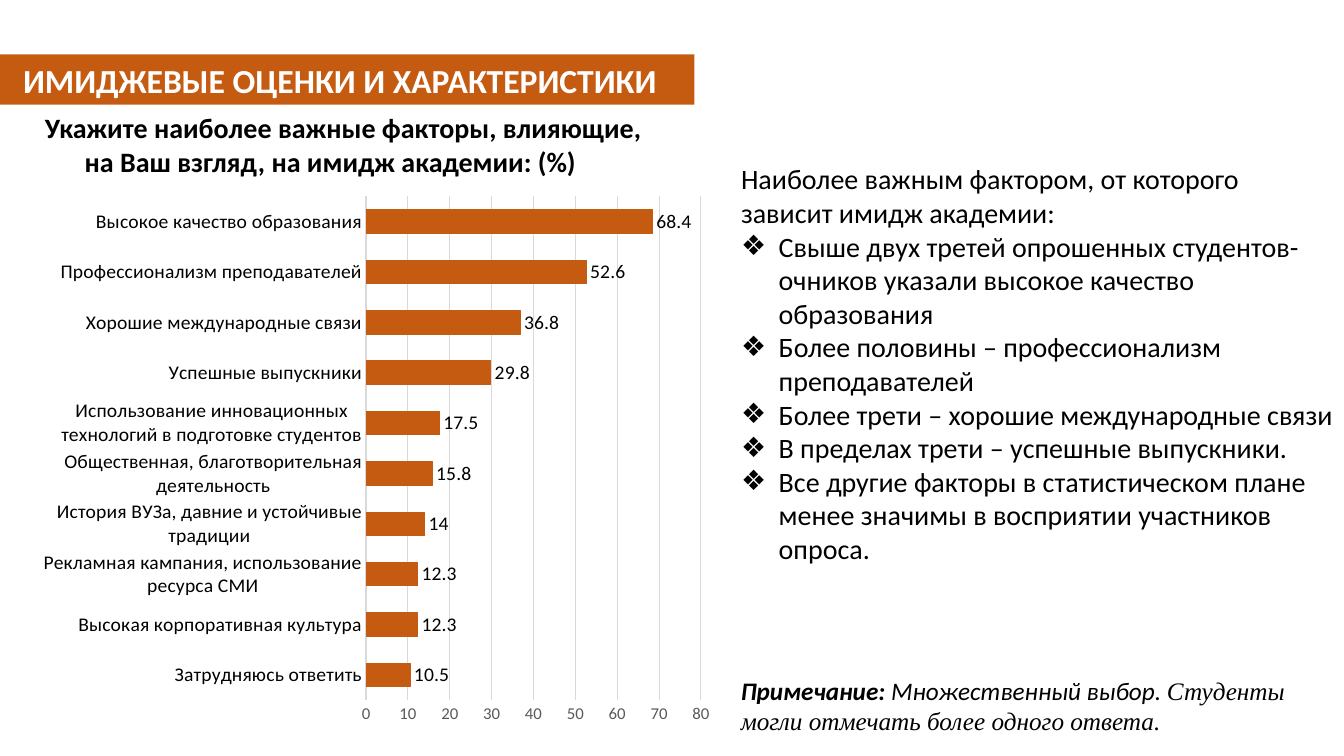
import lxml.etree
import pptx
import pptx.chart.data
import pptx.dml.color
import pptx.enum.chart
import pptx.enum.text
import pptx.oxml.ns
import pptx.util

Cm = pptx.util.Cm
Pt = pptx.util.Pt
qn = pptx.oxml.ns.qn
ALIGN = pptx.enum.text.PP_ALIGN
ANCHOR = pptx.enum.text.MSO_ANCHOR
TICK = pptx.enum.chart.XL_TICK_MARK

RUST = pptx.dml.color.RGBColor(0xC5, 0x5A, 0x11)
WHITE = pptx.dml.color.RGBColor(0xFF, 0xFF, 0xFF)
BLACK = pptx.dml.color.RGBColor(0, 0, 0)
DARK = pptx.dml.color.RGBColor(0x59, 0x59, 0x59)
LIGHT = pptx.dml.color.RGBColor(0xD9, 0xD9, 0xD9)

FACTORS = [
    ("Затрудняюсь ответить", 10.5),
    ("Высокая корпоративная культура", 12.3),
    ("Рекламная кампания, использование ресурса СМИ", 12.3),
    ("История ВУЗа, давние и устойчивые традиции", 14),
    ("Общественная, благотворительная деятельность", 15.8),
    ("Использование инновационных технологий в подготовке студентов", 17.5),
    ("Успешные выпускники", 29.8),
    ("Хорошие международные связи", 36.8),
    ("Профессионализм преподавателей", 52.6),
    ("Высокое качество образования", 68.4),
]
LEAD = "Наиболее важным фактором, от которого зависит имидж академии:"
POINTS = [
    "Свыше двух третей опрошенных студентов- очников указали высокое качество образования",
    "Более половины – профессионализм преподавателей",
    "Более трети – хорошие международные связи",
    "В пределах трети – успешные выпускники.",
    "Все другие факторы в статистическом плане менее значимы в восприятии участников опроса.",
]
NOTE = [
    ("Примечание: ", {"bold": True}),
    ("Множественный выбор. ", {}),
    ("Студенты могли отмечать более одного ответа.", {"name": "Times New Roman"}),
]
FRAME = {"word_wrap": True, "auto_size": pptx.enum.text.MSO_AUTO_SIZE.NONE,
         "vertical_anchor": ANCHOR.TOP}


def put(thing, form):
    for key, value in form.items():
        setattr(thing, key, value)


def style(font, size, color=BLACK, **more):
    put(font, {"name": "Calibri", "size": Pt(size), **more})
    font.color.rgb = color


def place(shape, box):
    put(shape, dict(zip(("left", "top", "width", "height"), box)))


def add_run(para, text, size, color=BLACK, **more):
    run = para.add_run()
    run.text = text
    style(run.font, size, color, **more)


def add_head(slide, box):
    title = slide.shapes.title
    place(title, box)
    title.fill.solid()
    title.fill.fore_color.rgb = RUST
    put(title.text_frame, {**FRAME, "vertical_anchor": ANCHOR.MIDDLE,
                           "margin_left": Cm(0.58)})
    para = title.text_frame.paragraphs[0]
    para.alignment = ALIGN.LEFT
    add_run(para, "ИМИДЖЕВЫЕ ОЦЕНКИ И ХАРАКТЕРИСТИКИ", 24, WHITE, bold=True)


def add_quest(slide, box):
    """Place the survey question above the chart."""
    frame = slide.shapes.add_textbox(*box).text_frame
    put(frame, FRAME)
    para = frame.paragraphs[0]
    para.alignment = ALIGN.CENTER
    para._p.get_or_add_pPr().set("indent", str(Cm(0.64)))
    add_run(para, "Укажите наиболее важные факторы, влияющие, "
            "на Ваш взгляд, на имидж академии: (%)", 20, bold=True)


def set_plot(chart, **parts):
    """Fix the inner plot area as fractions of the chart."""
    area = chart._chartSpace.chart.plotArea
    for old in area.findall(qn("c:layout")):
        area.remove(old)
    layout = lxml.etree.Element(qn("c:layout"))
    area.insert(0, layout)
    manual = lxml.etree.SubElement(layout, qn("c:manualLayout"))
    rules = {"layoutTarget": "inner", "xMode": "edge", "yMode": "edge", **parts}
    for key, value in rules.items():
        lxml.etree.SubElement(manual, qn("c:" + key)).set("val", str(value))


def add_bars(slide, box):
    data = pptx.chart.data.CategoryChartData()
    data.categories = [name for name, _ in FACTORS]
    data.add_series("Series 1", [share for _, share in FACTORS])
    kind = pptx.enum.chart.XL_CHART_TYPE.BAR_CLUSTERED
    chart = slide.shapes.add_chart(kind, *box, data).chart
    put(chart, {"has_title": False, "has_legend": False})
    style(chart.font, 10)
    set_plot(chart, x=0.49, y=0, w=0.49, h=0.97)

    plot = chart.plots[0]
    put(plot, {"gap_width": 115, "overlap": -20, "vary_by_categories": False,
               "has_data_labels": True})
    put(plot.data_labels, {
        "show_value": True,
        "position": pptx.enum.chart.XL_LABEL_POSITION.OUTSIDE_END})
    style(plot.data_labels.font, 14)
    bars = plot.series[0].format
    bars.fill.solid()
    bars.fill.fore_color.rgb = RUST
    bars.line.color.rgb = RUST
    bars.line.width = Pt(0.75)

    ticks = {"major_tick_mark": TICK.NONE, "minor_tick_mark": TICK.NONE}
    names, scale = chart.category_axis, chart.value_axis
    put(names, {**ticks, "has_major_gridlines": False})
    put(scale, {**ticks, "has_major_gridlines": True, "minimum_scale": 0,
                "maximum_scale": 80, "major_unit": 10})
    style(names.tick_labels.font, 14)
    style(scale.tick_labels.font, 12, DARK)
    scale.format.line.fill.background()
    for line, width in ((names.format.line, 1),
                        (scale.major_gridlines.format.line, 0.75)):
        line.color.rgb = LIGHT
        line.width = Pt(width)


def add_list(slide, box):
    body = slide.placeholders[1]
    place(body, box)
    frame = body.text_frame
    put(frame, FRAME)
    for rank, text in enumerate([LEAD, *POINTS]):
        para = frame.add_paragraph() if rank else frame.paragraphs[0]
        put(para, {"alignment": ALIGN.LEFT, "space_before": Pt(0)})
        add_run(para, text, 20)
        props = para._p.get_or_add_pPr()
        hang = Cm(0.95) if rank else 0
        props.set("marL", str(hang))
        props.set("indent", str(-hang))
        if rank:
            lxml.etree.SubElement(props, qn("a:buChar")).set("char", "❖")
        else:
            lxml.etree.SubElement(props, qn("a:buNone"))


def add_note(slide, box):
    frame = slide.shapes.add_textbox(*box).text_frame
    put(frame, FRAME)
    for text, form in NOTE:
        add_run(frame.paragraphs[0], text, 18, italic=True, **form)


def main():
    deck = pptx.Presentation()
    put(deck, {"slide_width": Cm(33.87), "slide_height": Cm(19.05)})
    slide = deck.slides.add_slide(deck.slide_layouts[1])
    side, wide = Cm(18.42), Cm(15.45)
    add_head(slide, (0, Cm(1.37), Cm(17.5), Cm(1.27)))
    add_list(slide, (side, Cm(3.95), wide, Cm(12.3)))
    add_quest(slide, (0, Cm(2.67), Cm(16.66), Cm(1.96)))
    add_bars(slide, (Cm(0.79), Cm(4.93), Cm(17.22), Cm(13.31)))
    add_note(slide, (side, Cm(16.89), wide, Cm(1.8)))
    deck.save("out.pptx")


if __name__ == "__main__":
    main()
